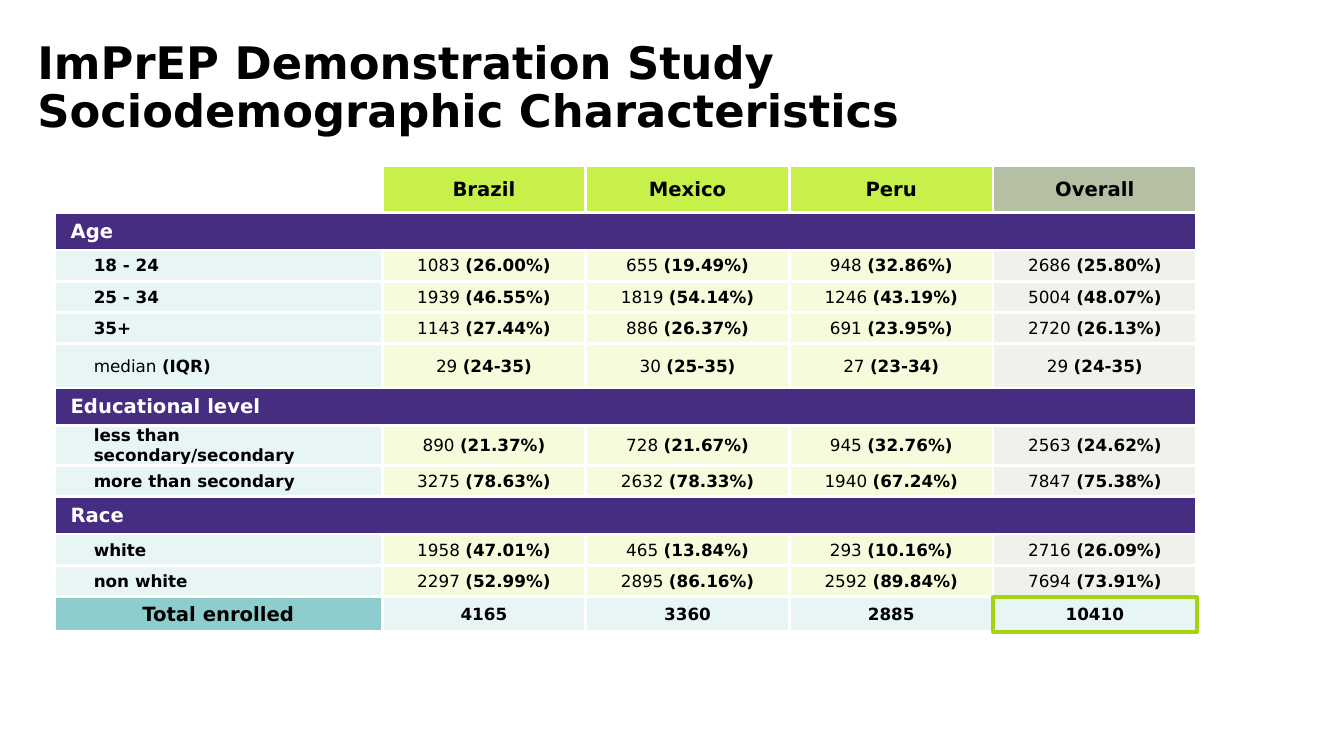
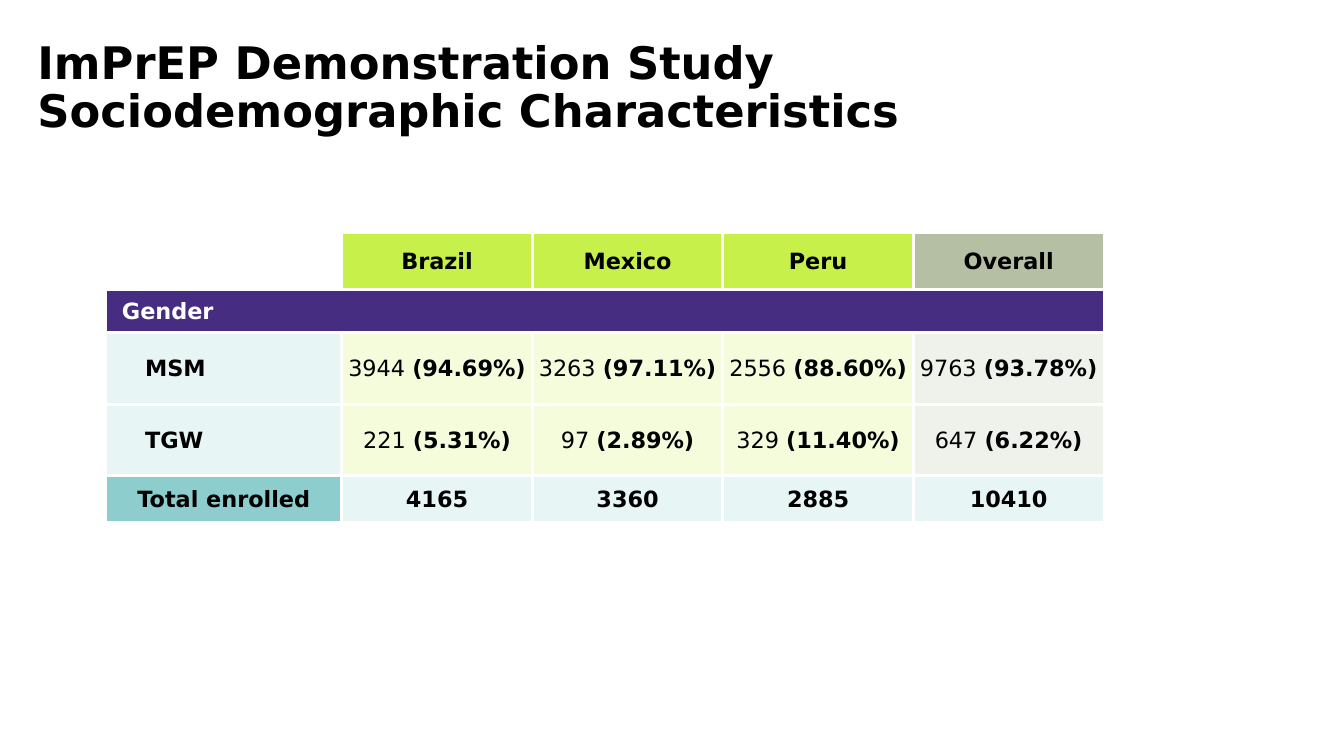
"""Build two slides of sociodemographic tables that share one title and table style."""
from dataclasses import dataclass, field

from lxml.etree import SubElement
from pptx import Presentation
from pptx.dml.color import RGBColor
from pptx.enum.shapes import MSO_SHAPE
from pptx.enum.text import MSO_ANCHOR, MSO_AUTO_SIZE, PP_ALIGN
from pptx.oxml import parse_xml
from pptx.oxml.ns import nsdecls, qn
from pptx.util import Inches, Pt

FONT = "DejaVu Sans"
BLACK = RGBColor(0x00, 0x00, 0x00)
WHITE = RGBColor(0xFF, 0xFF, 0xFF)
LIME = RGBColor(0xC7, 0xF0, 0x4A)
LIME_PALE = RGBColor(0xF4, 0xFC, 0xDC)
SAGE = RGBColor(0xB5, 0xBF, 0xA4)
SAGE_PALE = RGBColor(0xEF, 0xF1, 0xEB)
PURPLE = RGBColor(0x46, 0x2D, 0x81)
TEAL = RGBColor(0x8D, 0xCD, 0xCD)
TEAL_PALE = RGBColor(0xE7, 0xF5, 0xF5)
HIGHLIGHT = RGBColor(0xA6, 0xD4, 0x12)

TITLE_LINES = ("ImPrEP Demonstration Study", "Sociodemographic Characteristics")
TITLE_BOX = (0.37, 0.4, 11.13, 0.92)
COUNTRIES = ("Brazil", "Mexico", "Peru", "Overall")
TOTALS = ("4165", "3360", "2885", "10410")
BORDER_POINTS = 2.25
SECTION_INDENT = 0.16
LABEL_INDENT = 0.39


@dataclass
class TableStyle:
    """Sizes of one table: widths and heights in inches, text in points."""

    label_width: float
    header: float
    section: float
    body: float
    total: float
    heading_size: int
    body_size: int
    special_heights: dict = field(default_factory=dict)


DETAIL_STYLE = TableStyle(3.25, 0.47, 0.37, 0.31, 0.35, 14, 12,
                          {"median (IQR)": 0.44, "less than secondary/secondary": 0.4})
GENDER_STYLE = TableStyle(2.34, 0.56, 0.43, 0.71, 0.46, 16, 16)

DETAIL_SECTIONS = {
    "Age": {
        "18 - 24": ("1083 (26.00%)", "655 (19.49%)", "948 (32.86%)", "2686 (25.80%)"),
        "25 - 34": ("1939 (46.55%)", "1819 (54.14%)", "1246 (43.19%)", "5004 (48.07%)"),
        "35+": ("1143 (27.44%)", "886 (26.37%)", "691 (23.95%)", "2720 (26.13%)"),
        "median (IQR)": ("29 (24-35)", "30 (25-35)", "27 (23-34)", "29 (24-35)"),
    },
    "Educational level": {
        "less than secondary/secondary":
            ("890 (21.37%)", "728 (21.67%)", "945 (32.76%)", "2563 (24.62%)"),
        "more than secondary":
            ("3275 (78.63%)", "2632 (78.33%)", "1940 (67.24%)", "7847 (75.38%)"),
    },
    "Race": {
        "white": ("1958 (47.01%)", "465 (13.84%)", "293 (10.16%)", "2716 (26.09%)"),
        "non white": ("2297 (52.99%)", "2895 (86.16%)", "2592 (89.84%)", "7694 (73.91%)"),
    },
}
GENDER_SECTIONS = {
    "Gender": {
        "MSM": ("3944 (94.69%)", "3263 (97.11%)", "2556 (88.60%)", "9763 (93.78%)"),
        "TGW": ("221 (5.31%)", "97 (2.89%)", "329 (11.40%)", "647 (6.22%)"),
    },
}


def set_font(paragraph, size, color=BLACK):
    """Give a paragraph the shared bold font."""
    font = paragraph.font
    font.name, font.size, font.bold = FONT, Pt(size), True
    font.color.rgb = color


def add_title(page):
    """Place the two-line title in the title placeholder."""
    title = page.shapes.title
    title.left, title.top, title.width, title.height = map(Inches, TITLE_BOX)
    frame = title.text_frame
    frame.margin_left = frame.margin_top = frame.margin_right = frame.margin_bottom = 0
    frame.vertical_anchor = MSO_ANCHOR.TOP
    frame.auto_size = MSO_AUTO_SIZE.NONE
    paragraph = frame.paragraphs[0]
    paragraph.alignment = PP_ALIGN.LEFT
    paragraph.line_spacing = 0.9
    set_font(paragraph, 32)
    for index, line in enumerate(TITLE_LINES):
        if index:
            paragraph.add_line_break()
        paragraph.add_run().text = line


def add_borders(cell):
    """Draw white borders on all four sides of a cell."""
    properties = cell._tc.get_or_add_tcPr()
    for index, side in enumerate(("lnL", "lnR", "lnT", "lnB")):
        border = parse_xml(f'<a:{side} {nsdecls("a")} w="{Pt(BORDER_POINTS)}"/>')
        fill = SubElement(border, qn("a:solidFill"))
        SubElement(fill, qn("a:srgbClr"), val=str(WHITE))
        properties.insert(index, border)


def fill_cell(cell, text, fill, size, color=BLACK, indent=None):
    """Write a cell: indented labels sit left, all others are centred."""
    cell.fill.solid()
    cell.fill.fore_color.rgb = fill
    cell.vertical_anchor = MSO_ANCHOR.MIDDLE
    cell.margin_left = Inches(0.01 if indent is None else indent)
    cell.margin_right = cell.margin_top = Inches(0.01)
    cell.margin_bottom = 0
    paragraph = cell.text_frame.paragraphs[0]
    paragraph.alignment = PP_ALIGN.CENTER if indent is None else PP_ALIGN.LEFT
    set_font(paragraph, size, color)
    count, bracket, share = text.partition(" (")
    if bracket:
        span = paragraph.add_run()
        span.text = count + " "
        span.font.bold = False
        text = "(" + share
    span = paragraph.add_run()
    span.text = text
    span.font.bold = True


def list_rows(sections, style):
    """Return the kind, height, label and values of every table row."""
    rows = [("header", style.header, "", COUNTRIES)]
    for section, groups in sections.items():
        rows.append(("section", style.section, section, ()))
        rows += [("body", style.special_heights.get(label, style.body), label, values)
                 for label, values in groups.items()]
    return rows + [("total", style.total, "Total enrolled", TOTALS)]


def fill_row(cells, kind, label, values, style):
    """Write the label and the values of one row."""
    first, *others = cells
    if kind == "header":
        first.fill.background()
    elif kind == "section":
        first.merge(others[-1])
        fill_cell(first, label, PURPLE, style.heading_size, WHITE, SECTION_INDENT)
    elif kind == "body":
        fill_cell(first, label, TEAL_PALE, style.body_size, indent=LABEL_INDENT)
    else:
        fill_cell(first, label, TEAL, style.heading_size)
    country, overall = {"header": (LIME, SAGE), "body": (LIME_PALE, SAGE_PALE)}.get(
        kind, (TEAL_PALE, TEAL_PALE))
    size = style.heading_size if kind == "header" else style.body_size
    for cell, name, value in zip(others, COUNTRIES, values):
        fill_cell(cell, value, overall if name == "Overall" else country, size)
    for cell in cells:
        add_borders(cell)


def add_study_table(page, left, top, width, sections, style):
    """Place a study table and return the box of its grand total in inches."""
    rows = list_rows(sections, style)
    height = sum(row[1] for row in rows)
    table = page.shapes.add_table(len(rows), len(COUNTRIES) + 1, Inches(left), Inches(top),
                                  Inches(width), Inches(height)).table
    table.first_row = table.horz_banding = False
    value_width = (width - style.label_width) / len(COUNTRIES)
    for index, column in enumerate(table.columns):
        column.width = Inches(value_width if index else style.label_width)
    for line, (kind, row_height, label, values) in zip(table.rows, rows):
        line.height = Inches(row_height)
        fill_row(list(line.cells), kind, label, values, style)
    return left + width - value_width, top + height - style.total, value_width, style.total


def add_highlight(page, box):
    """Outline a box in bright green."""
    frame = page.shapes.add_shape(MSO_SHAPE.RECTANGLE, *map(Inches, box))
    frame.shadow.inherit = False
    frame.fill.background()
    frame.line.color.rgb = HIGHLIGHT
    frame.line.width = Pt(3)


def add_page(deck):
    """Add a slide with the shared title."""
    page = deck.slides.add_slide(deck.slide_layouts[5])
    add_title(page)
    return page


def main():
    """Build and save the deck."""
    deck = Presentation()
    deck.slide_width, deck.slide_height = Inches(13.33), Inches(7.5)
    page = add_page(deck)
    total_box = add_study_table(page, 0.54, 1.64, 11.33, DETAIL_SECTIONS, DETAIL_STYLE)
    add_highlight(page, total_box)
    add_study_table(add_page(deck), 1.05, 2.31, 9.9, GENDER_SECTIONS, GENDER_STYLE)
    deck.save("out.pptx")


if __name__ == "__main__":
    main()
